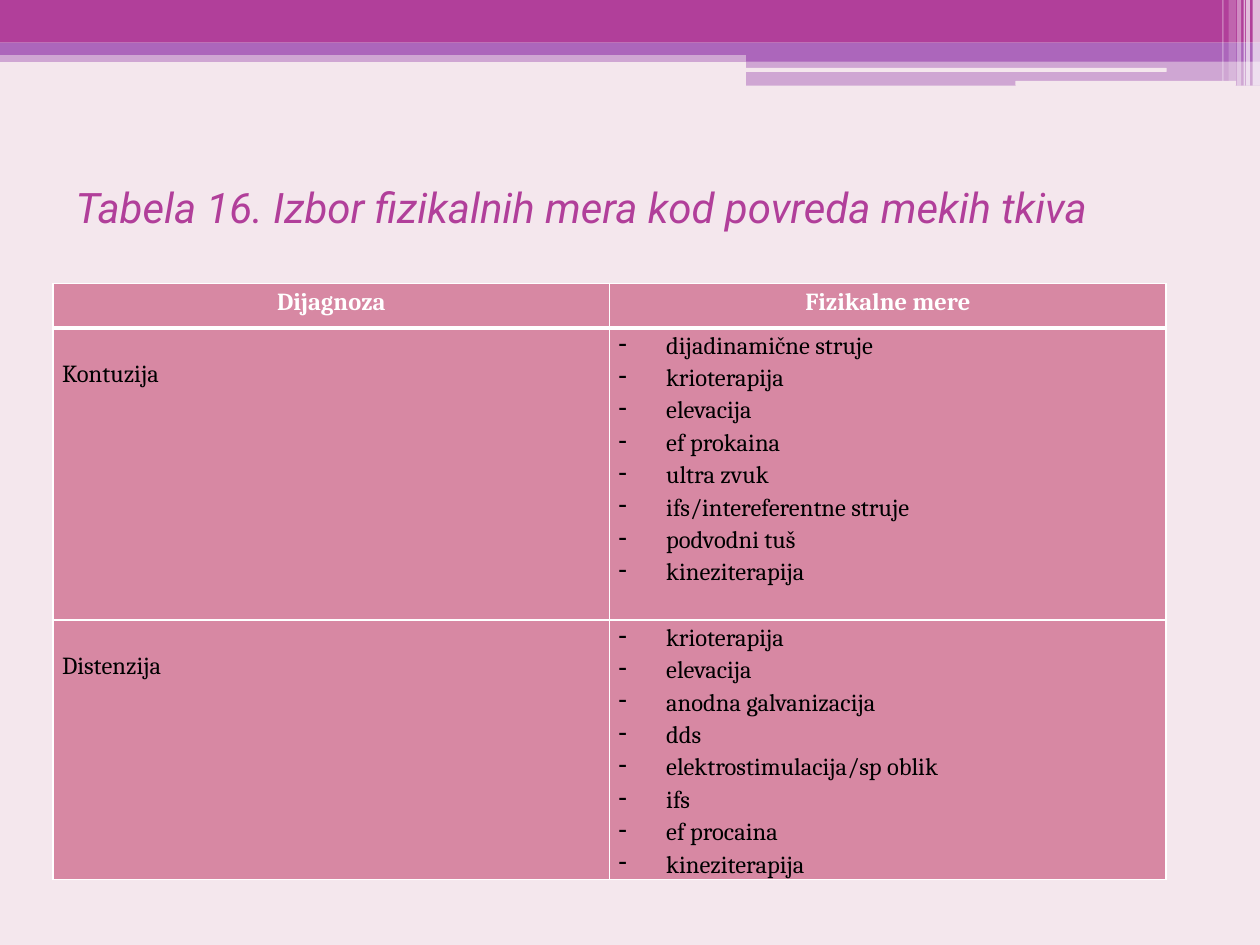
from dataclasses import dataclass
from pptx import Presentation, util as u
from pptx.dml.color import RGBColor
from pptx.enum import shapes, text
from pptx.oxml import parse_xml
from pptx.oxml.ns import nsdecls

TITLE = "Tabela 16. Izbor fizikalnih mera kod povreda mekih tkiva"
HEADS = ["Dijagnoza", "Fizikalne mere"]
ROWS = [
    ("Kontuzija", ["dijadinamične struje", "krioterapija", "elevacija",
                   "ef prokaina", "ultra zvuk", "ifs/intereferentne struje",
                   "podvodni tuš", "kineziterapija"]),
    ("Distenzija", ["krioterapija", "elevacija", "anodna galvanizacija",
                    "dds", "elektrostimulacija/sp oblik", "ifs",
                    "ef procaina", "kineziterapija"]),
]


@dataclass
class Theme:
    back: str = "F4E7ED"
    main: str = "B13F9A"
    band: str = "AC66BB"
    cell: str = "D788A3"
    white: str = "FFFFFF"
    black: str = "000000"
    head: str = "Roboto"
    body: str = "Cambria"
    big: int = 24
    small: int = 14


T = Theme()
WIDE, HIGH = 25.4, 19.05
HALF = 15.04
BANDS = [
    (0, 1.02, WIDE, 0.23, T.band, 50),
    (0, 0, WIDE, 0.86, T.main, 100),
    (0, 0.86, WIDE, 0.25, T.band, 100),
    (HALF, 0.99, WIDE - HALF, 0.25, T.band, 100),
    (HALF, 1.22, WIDE - HALF, 0.51, T.band, 50),
]
BARS = [(15.01, 1.37, 8.51, 0.08), (20.47, 1.63, 4.45, 0.1)]
STRIPES = [
    (25.25, 0.15, 1.73, 65), (25.12, 0.08, 1.73, 65), (25.07, 0.03, 1.73, 60),
    (24.94, 0.08, 1.73, 40), (24.77, 0.15, 1.63, 20), (24.64, 0.03, 1.63, 30),
]
GRID = (1.07, 5.72)
COL = 11.22
HEIGHTS = [0.89, 5.89, 5.05]
SIDE, DROP, DENT = 0.18, 0.57, 0.96


def rgb(hue):
    return RGBColor.from_string(hue)


def block(slide, box, hue, alpha=100, kind=shapes.MSO_SHAPE.RECTANGLE):
    item = slide.shapes.add_shape(kind, *map(u.Cm, box))
    item.shadow.inherit = False
    item.line.fill.background()
    item.fill.solid()
    item.fill.fore_color.rgb = rgb(hue)
    if alpha < 100:
        tint = item.element.spPr.find(".//{*}srgbClr")
        tint.append(parse_xml(
            f'<a:alpha {nsdecls("a")} val="{alpha * 1000}"/>'))
    return item


def write(para, words, face, size, hue, bold=False, slant=False):
    run = para.add_run()
    run.text = words
    font = run.font
    font.name, font.size = face, u.Pt(size)
    font.bold, font.italic = bold, slant
    font.color.rgb = rgb(hue)


def border(cell, **edges):
    props = cell._tc.get_or_add_tcPr()
    for side in "LRTB":
        width = u.Pt(edges.get(side, 1))
        props.append(parse_xml(
            f'<a:ln{side} {nsdecls("a")} w="{width}"><a:solidFill>'
            f'<a:srgbClr val="{T.white}"/></a:solidFill></a:ln{side}>'))


def fill(cell, lines, head=False, dash=False, drop=0, **edges):
    border(cell, **edges)
    cell.fill.solid()
    cell.fill.fore_color.rgb = rgb(T.cell)
    cell.margin_left = cell.margin_right = u.Cm(SIDE)
    cell.margin_top, cell.margin_bottom = u.Cm(drop), 0
    frame = cell.text_frame
    for i, line in enumerate(lines):
        para = frame.add_paragraph() if i else frame.paragraphs[0]
        para.line_spacing = 1.15
        para.alignment = text.PP_ALIGN.CENTER if head else text.PP_ALIGN.LEFT
        if dash:
            props = para._p.get_or_add_pPr()
            props.set("marL", str(u.Cm(DENT)))
            props.set("indent", str(-u.Cm(DENT)))
            props.append(parse_xml(f'<a:buChar {nsdecls("a")} char="-"/>'))
        write(para, line, T.body, T.small, T.white if head else T.black, head)


def decor(slide):
    for *box, hue, alpha in BANDS:
        block(slide, box, hue, alpha)
    for box in BARS:
        block(slide, box, T.back, kind=shapes.MSO_SHAPE.ROUNDED_RECTANGLE)
    for left, wide, high, alpha in STRIPES:
        block(slide, (left, 0, wide, high), T.white, alpha)


def heading(slide):
    title = slide.shapes.title
    slide.shapes.element.append(title.element)
    title.left, title.top, title.width, title.height = map(
        u.Cm, (1.27, 3.18, 22.86, 2.97))
    frame = title.text_frame
    frame.word_wrap = True
    frame.auto_size = text.MSO_AUTO_SIZE.NONE
    frame.vertical_anchor = text.MSO_ANCHOR.MIDDLE
    frame.margin_bottom = u.Cm(1.12)
    para = frame.paragraphs[0]
    para.alignment = text.PP_ALIGN.LEFT
    write(para, TITLE, T.head, T.big, T.main, slant=True)


def table(slide):
    size = (COL * len(HEADS), sum(HEIGHTS))
    grid = slide.shapes.add_table(
        len(HEIGHTS), len(HEADS), *map(u.Cm, GRID + size)).table
    for col in grid.columns:
        col.width = u.Cm(COL)
    for row, high in zip(grid.rows, HEIGHTS):
        row.height = u.Cm(high)
    for c, name in enumerate(HEADS):
        fill(grid.cell(0, c), [name], head=True, B=3)
    for r, (name, cures) in enumerate(ROWS, 1):
        top = 3 if r == 1 else 1
        fill(grid.cell(r, 0), [name], drop=DROP, T=top)
        fill(grid.cell(r, 1), cures, dash=True, T=top)


def main():
    deck = Presentation()
    deck.slide_width, deck.slide_height = u.Cm(WIDE), u.Cm(HIGH)
    slide = deck.slides.add_slide(deck.slide_layouts[5])
    slide.background.fill.solid()
    slide.background.fill.fore_color.rgb = rgb(T.back)
    decor(slide)
    heading(slide)
    table(slide)
    deck.save("out.pptx")


if __name__ == "__main__":
    main()
